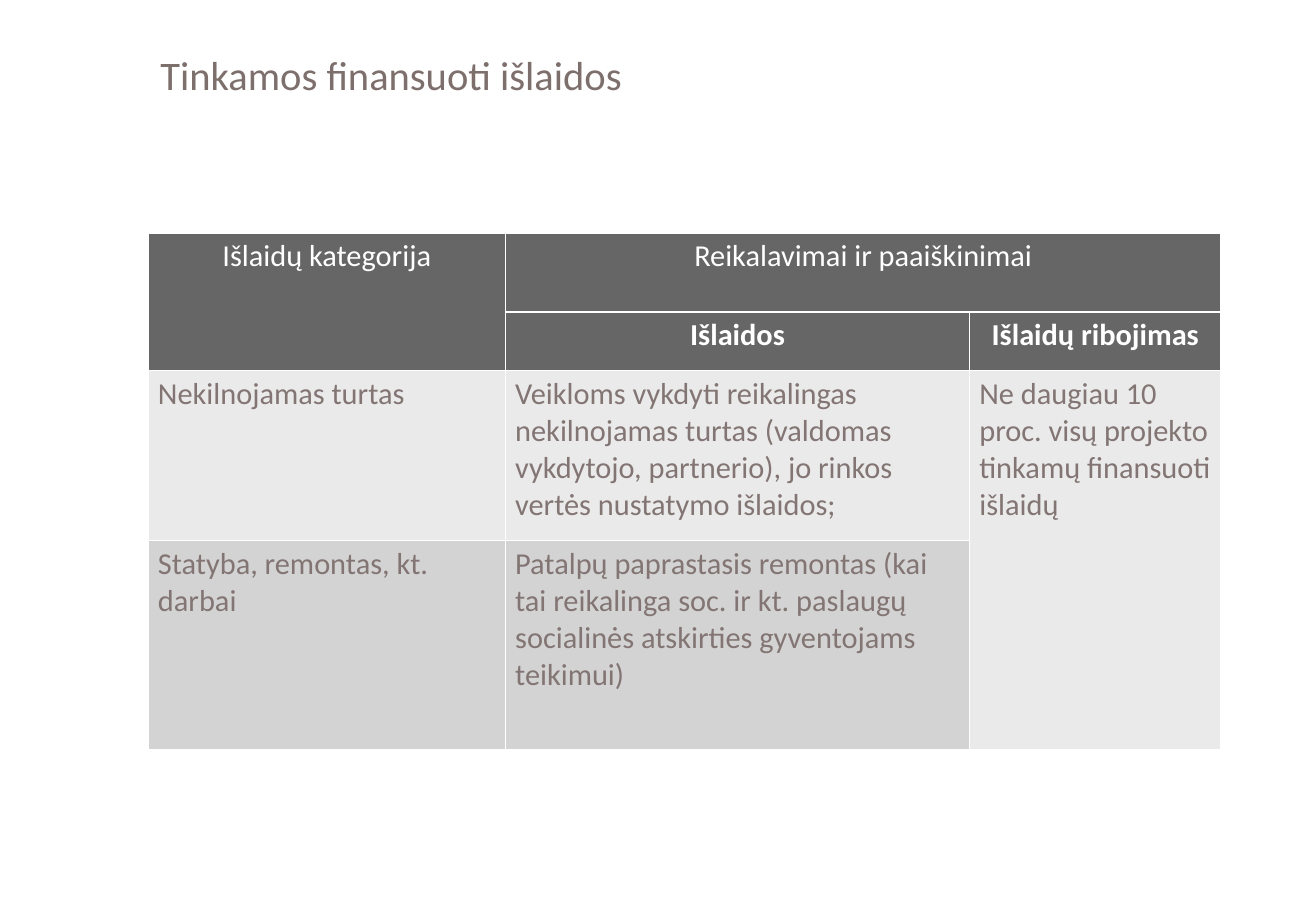
from dataclasses import dataclass

from lxml import etree
from pptx import Presentation
from pptx.dml.color import RGBColor
from pptx.enum.text import MSO_ANCHOR, PP_ALIGN
from pptx.oxml.ns import qn
from pptx.util import Inches, Pt

CENTER, LEFT = PP_ALIGN.CENTER, PP_ALIGN.LEFT
MIDDLE = MSO_ANCHOR.MIDDLE
TITLE_ONLY = 5

# Content
TITLE = "Tinkamos finansuoti išlaidos"
ROWS = [
    ["Išlaidų kategorija", "Reikalavimai ir paaiškinimai", ""],
    ["", "Išlaidos", "Išlaidų ribojimas"],
    ["Nekilnojamas turtas",
     "Veikloms vykdyti reikalingas nekilnojamas turtas (valdomas vykdytojo, "
     "partnerio), jo rinkos vertės nustatymo išlaidos;",
     "Ne daugiau 10 proc. visų projekto tinkamų finansuoti išlaidų"],
    ["Statyba, remontas, kt. darbai",
     "Patalpų paprastasis remontas (kai tai reikalinga soc. ir kt. paslaugų "
     "socialinės atskirties gyventojams teikimui)",
     ""],
]
MERGES = [((0, 0), (1, 0)), ((0, 1), (0, 2)), ((2, 2), (3, 2))]
HEADER_ROWS = 2

# Layout in inches
TITLE_BOX = (1.22, 0.34, 8.94, 0.6)
TABLE_LEFT, TABLE_TOP = 1.22, 1.92
COLUMN_WIDTHS = [2.94, 3.82, 2.07]
ROW_HEIGHTS = [0.65, 0.48, 1.4, 1.72]


@dataclass(frozen=True)
class Theme:
    font: str = "Calibri"
    title_size: int = 24
    table_size: int = 18
    title: str = "7D6F6C"
    header_text: str = "FFFFFF"
    body_text: str = "827573"
    border: str = "FFFFFF"
    border_width: int = 1
    row_fills: tuple = ("666666", "666666", "EAEAEA", "D3D3D3")


THEME = Theme()


def write_text(frame, text, *, size, color, bold=False, align=LEFT, spacing=1.0):
    frame.word_wrap = True
    paragraph = frame.paragraphs[0]
    paragraph.alignment = align
    paragraph.line_spacing = spacing
    run = paragraph.add_run()
    run.text = text
    run.font.name = THEME.font
    run.font.size = Pt(size)
    run.font.bold = bold
    run.font.color.rgb = RGBColor.from_string(color)


def style_cell(cell, fill):
    cell.margin_left = cell.margin_right = Inches(0.08)
    cell.margin_top = cell.margin_bottom = Inches(0.04)
    properties = cell._tc.get_or_add_tcPr()
    for side in ("a:lnL", "a:lnR", "a:lnT", "a:lnB"):
        line = etree.SubElement(properties, qn(side), w=str(Pt(THEME.border_width)))
        solid = etree.SubElement(line, qn("a:solidFill"))
        etree.SubElement(solid, qn("a:srgbClr"), val=THEME.border)
    cell.fill.solid()
    cell.fill.fore_color.rgb = RGBColor.from_string(fill)


def add_title(slide):
    title = slide.shapes.title
    title.left, title.top, title.width, title.height = map(Inches, TITLE_BOX)
    title.text_frame.vertical_anchor = MIDDLE
    write_text(title.text_frame, TITLE, size=THEME.title_size,
               color=THEME.title, spacing=0.9)


def add_expense_table(slide):
    table = slide.shapes.add_table(
        len(ROWS), len(COLUMN_WIDTHS), Inches(TABLE_LEFT), Inches(TABLE_TOP),
        Inches(sum(COLUMN_WIDTHS)), Inches(sum(ROW_HEIGHTS))).table
    for column, width in zip(table.columns, COLUMN_WIDTHS):
        column.width = Inches(width)
    for row, height in zip(table.rows, ROW_HEIGHTS):
        row.height = Inches(height)

    # Cell text and fills
    for row_index, texts in enumerate(ROWS):
        is_header = row_index < HEADER_ROWS
        for column_index, text in enumerate(texts):
            cell = table.cell(row_index, column_index)
            fill_row = row_index
            if (row_index, column_index) == MERGES[-1][1]:
                fill_row = MERGES[-1][0][0]
            style_cell(cell, THEME.row_fills[fill_row])
            if text:
                write_text(cell.text_frame, text, size=THEME.table_size,
                           color=THEME.header_text if is_header else THEME.body_text,
                           bold=row_index == 1,
                           align=CENTER if is_header else LEFT)

    # Merged cells
    for first, last in MERGES:
        table.cell(*first).merge(table.cell(*last))


def main():
    presentation = Presentation()
    presentation.slide_width = Inches(10.83)
    presentation.slide_height = Inches(7.5)
    slide = presentation.slides.add_slide(presentation.slide_layouts[TITLE_ONLY])
    add_title(slide)
    add_expense_table(slide)
    presentation.save("out.pptx")


if __name__ == "__main__":
    main()
